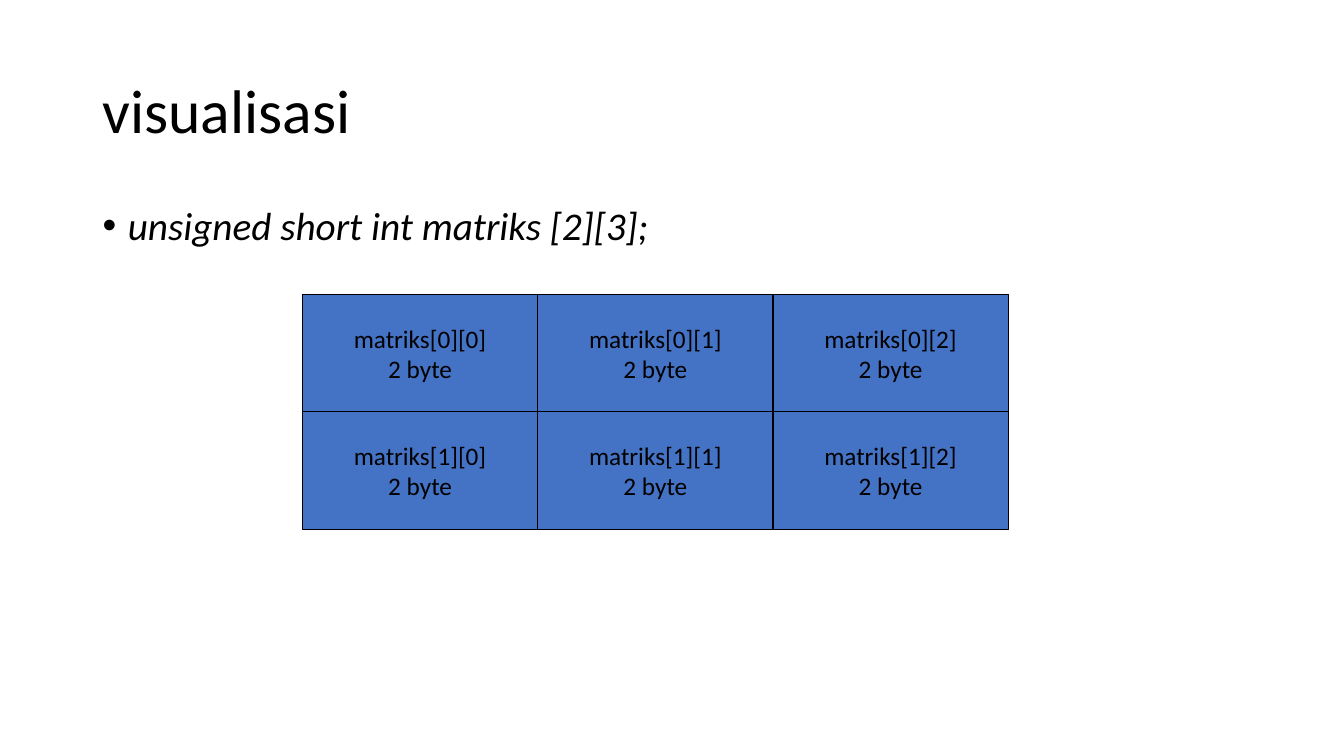
from lxml import etree
from pptx import Presentation
from pptx import util as u
from pptx.dml import color
from pptx.enum import shapes, text
from pptx.oxml import ns


def rgb(value):
    return color.RGBColor.from_string(value)


class Deck:
    """Holds the style and the current slide, and draws each kind of element."""

    font, ink, cell_fill = "Calibri", "000000", "4472C4"

    def __init__(self, width, height):
        self.prs = Presentation()
        self.prs.slide_width, self.prs.slide_height = u.Inches(width), u.Inches(height)
        self.s = self.prs.slides.add_slide(self.prs.slide_layouts[6])

    def run(self, p, words, size, italic=None):
        r = p.add_run()
        r.text = words
        r.font.name, r.font.size, r.font.italic = self.font, u.Pt(size), italic
        r.font.color.rgb = rgb(self.ink)

    def textbox(self, box, anchor):
        tf = self.s.shapes.add_textbox(*map(u.Inches, box)).text_frame
        tf.word_wrap, tf.vertical_anchor = True, anchor
        p = tf.paragraphs[0]
        p.line_spacing = 0.9
        return p

    def title(self, words, box):
        self.run(self.textbox(box, text.MSO_ANCHOR.MIDDLE), words, 44)

    def bullet(self, words, box):
        p = self.textbox(box, text.MSO_ANCHOR.TOP)
        p.space_before = u.Pt(10)
        pPr = p._p.get_or_add_pPr()
        pPr.set("marL", str(u.Inches(0.25)))
        pPr.set("indent", str(-u.Inches(0.25)))
        etree.SubElement(pPr, ns.qn("a:buFont")).set("typeface", "Arial")
        etree.SubElement(pPr, ns.qn("a:buChar")).set("char", "•")
        self.run(p, words, 28, italic=True)

    def cell(self, lines, box):
        sp = self.s.shapes.add_shape(shapes.MSO_SHAPE.RECTANGLE, *map(u.Inches, box))
        sp.shadow.inherit = False
        sp.fill.solid()
        sp.fill.fore_color.rgb = rgb(self.cell_fill)
        sp.line.color.rgb = rgb(self.ink)
        sp.line.width = u.Pt(0.75)
        tf = sp.text_frame
        tf.word_wrap, tf.vertical_anchor = False, text.MSO_ANCHOR.MIDDLE
        for i, line in enumerate(lines):
            p = tf.add_paragraph() if i else tf.paragraphs[0]
            p.alignment = text.PP_ALIGN.CENTER
            self.run(p, line, 18)

    def matrix(self, name, rows, cols, box):
        left, top, width, height = box
        w, h = width / cols, height / rows
        for row in range(rows):
            for col in range(cols):
                self.cell((f"{name}[{row}][{col}]", "2 byte"),
                          (left + col * w, top + row * h, w, h))


def main():
    deck = Deck(13.33, 7.5)
    deck.title("visualisasi", (0.92, 0.4, 11.5, 1.45))
    deck.bullet("unsigned short int matriks [2][3];", (0.92, 2, 11.5, 4.76))
    deck.matrix("matriks", 2, 3, (3, 2.92, 7, 2.33))
    deck.prs.save("out.pptx")


if __name__ == "__main__":
    main()
